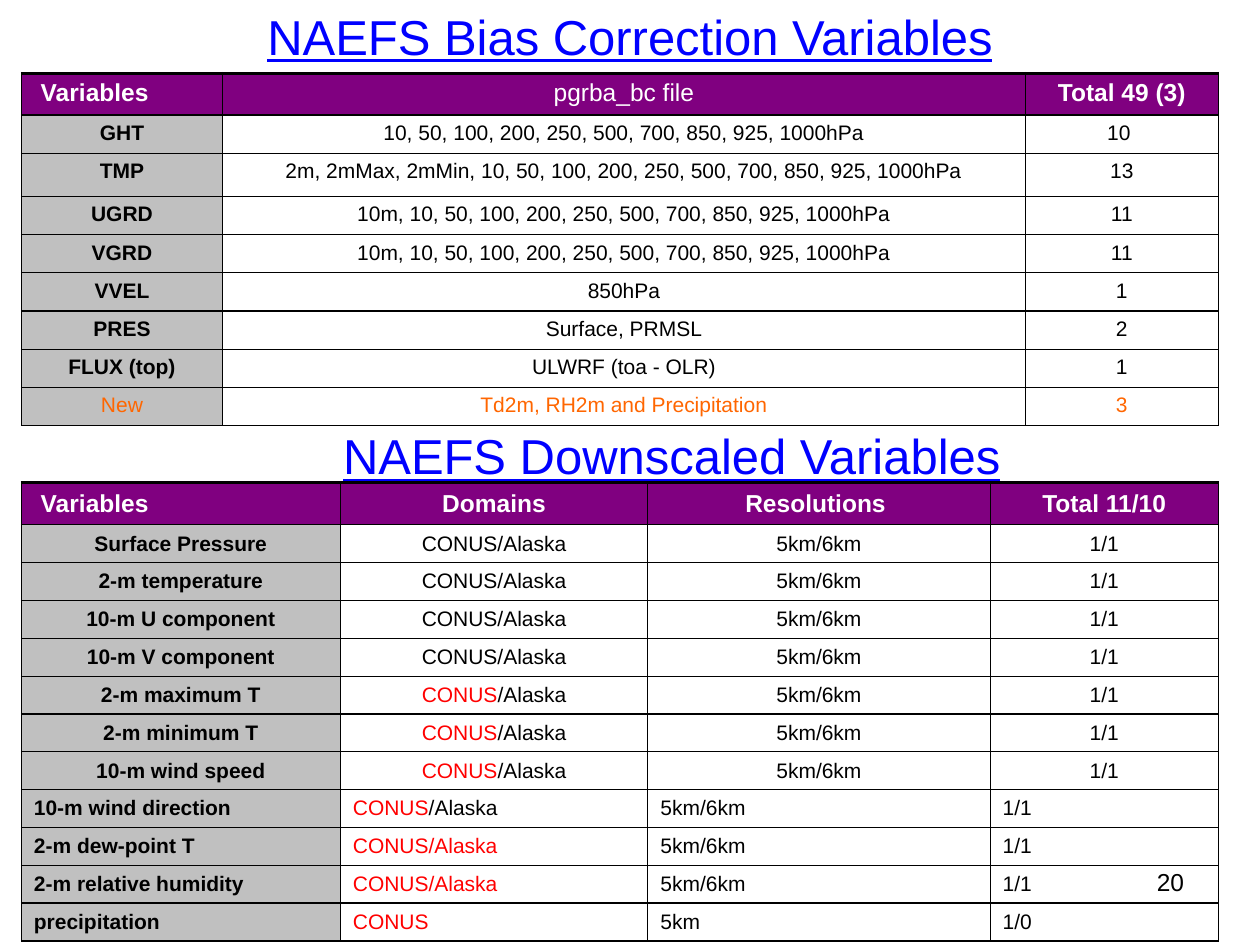
from pptx import Presentation
from pptx.dml.color import RGBColor
from pptx.enum.text import MSO_ANCHOR, PP_ALIGN
from pptx.oxml import parse_xml
from pptx.oxml.ns import nsdecls
from pptx.util import Cm, Pt

COLORS = {
    "head": "800080", "label": "C0C0C0", "paper": "FFFFFF", "ink": "000000",
    "title": "0000FF", "new": "FF6600", "red": "FF0000",
}
LEVELS = "10, 50, 100, 200, 250, 500, 700, 850, 925, 1000hPa"

BIAS = [
    (" Variables", "pgrba_bc file", "Total 49 (3)"),
    ("GHT", LEVELS, "10 "),
    ("TMP", "2m, 2mMax, 2mMin, " + LEVELS, "13"),
    ("UGRD", "10m, " + LEVELS, "11"),
    ("VGRD", "10m, " + LEVELS, "11"),
    ("VVEL", "850hPa", "1"),
    ("PRES", "Surface, PRMSL", "2"),
    ("FLUX (top)", "ULWRF (toa - OLR)", "1"),
    ("New", "Td2m, RH2m and Precipitation", "3"),
]

# Domain text before the bar is red
BOTH, HALF, FULL = "CONUS/Alaska", "CONUS|/Alaska", "CONUS/Alaska|"
DOMAINS = [
    ("Surface Pressure", BOTH), ("2-m temperature", BOTH),
    ("10-m U component", BOTH), ("10-m V component", BOTH),
    ("2-m maximum T", HALF), ("2-m minimum T", HALF),
    ("10-m wind speed", HALF), ("10-m wind direction", HALF),
    ("2-m dew-point T", FULL), ("2-m relative humidity", FULL),
]
DOWN = [
    (" Variables", "Domains", "Resolutions ", "Total 11/10"),
    *[(name, area, "5km/6km", "1/1") for name, area in DOMAINS],
    ("precipitation", "CONUS|", "5km", "1/0"),
]


def color(name):
    return RGBColor.from_string(COLORS[name])


def style(para, size, ink, align, bold=False):
    para.alignment = align
    font = para.font
    font.name, font.size, font.bold = "Arial", Pt(size), bold
    font.color.rgb = color(ink)


def border(cell, top, bottom):
    props = cell._tc.get_or_add_tcPr()
    sides = (("L", 0.75), ("R", 0.75), ("T", top), ("B", bottom))
    for place, (side, width) in enumerate(sides):
        props.insert(place, parse_xml(
            f'<a:ln{side} {nsdecls("a")} w="{Pt(width)}"><a:solidFill>'
            f'<a:srgbClr val="{COLORS["ink"]}"/></a:solidFill></a:ln{side}>'))


def paint(cell, fill):
    if fill:
        cell.fill.solid()
        cell.fill.fore_color.rgb = color(fill)
    else:
        cell.fill.background()


def write(cell, text, size, ink, align, bold):
    para = cell.text_frame.paragraphs[0]
    style(para, size, ink, align, bold)
    red, bar, rest = text.rpartition("|")
    if red:
        para.add_run().text = red
        para.runs[0].font.color.rgb = color("red")
    if rest:
        para.add_run().text = rest


def grid(slide, box, rows, widths, heights, anchor, left_from, heavy_from):
    """Table with a purple head; rows from left_from on are left aligned,
    and rows from heavy_from on have a heavier line below."""
    table = slide.shapes.add_table(
        len(rows), len(widths), *map(Cm, box)).table
    for col, width in zip(table.columns, widths):
        col.width = Cm(width)
    for row, height in zip(table.rows, heights):
        row.height = Cm(height)
    below = [1 if r == 0 or r >= heavy_from else 0.75
             for r in range(len(rows))]
    for r, row in enumerate(rows):
        head, new = r == 0, row[0] == "New"
        for c, text in enumerate(row):
            cell = table.cell(r, c)
            cell.vertical_anchor = anchor
            paint(cell, "head" if head else None if c else "label")
            border(cell, 2 if head else below[r - 1], below[r])
            left = r >= left_from or (head and c == 0)
            align = PP_ALIGN.LEFT if left else PP_ALIGN.CENTER
            ink = "paper" if head else "new" if new else "ink"
            bold = text != "pgrba_bc file" if head else c == 0 and not new
            write(cell, text, 14 if head else 12, ink, align, bold)


def label(slide, box, text, size, ink, align, wrap=True):
    frame = slide.shapes.add_textbox(*map(Cm, box)).text_frame
    frame.word_wrap = wrap
    para = frame.paragraphs[0]
    para.text = text
    style(para, size, ink, align)
    return para


def title(slide, box, text, wrap):
    para = label(slide, box, text, 28, "title", PP_ALIGN.CENTER, wrap)
    para.font.underline = True


def main():
    deck = Presentation()
    deck.slide_width, deck.slide_height = Cm(25.4), Cm(19.05)
    slide = deck.slides.add_slide(deck.slide_layouts[6])

    # Bias correction
    grid(slide, (0.43, 1.48, 24.13, 7.06), BIAS, (4.06, 16.18, 3.89),
         [0.84, 0.77, 0.87] + [0.77] * 6, MSO_ANCHOR.TOP, 99, 99)
    title(slide, (5.05, 0, 15.3, 1.45),
          "NAEFS Bias Correction Variables", False)

    # Downscaled variables
    grid(slide, (0.43, 9.73, 24.13, 9.22), DOWN, (6.43, 6.2, 6.9, 4.6),
         [0.84] + [0.76] * 11, MSO_ANCHOR.MIDDLE, 8, 8)
    title(slide, (3.38, 8.46, 20.32, 1.45),
          "NAEFS Downscaled Variables", True)

    # Page number, in front of the lower table
    label(slide, (18.2, 17.35, 5.92, 1.32), "20", 14, "ink", PP_ALIGN.RIGHT)

    deck.save("out.pptx")


if __name__ == "__main__":
    main()
